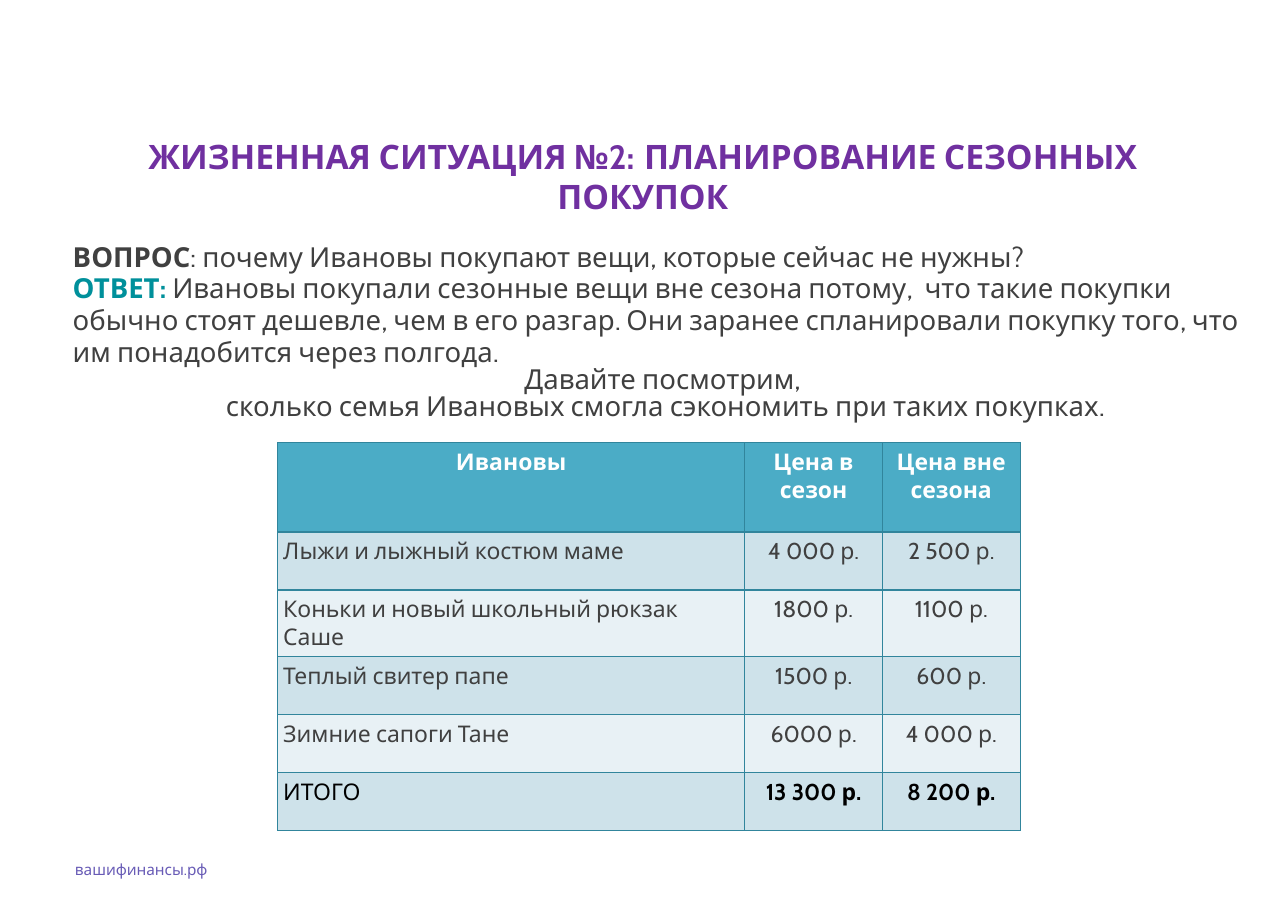
from dataclasses import dataclass

from lxml.etree import SubElement
from pptx import Presentation
from pptx.dml.color import RGBColor
from pptx.enum.text import MSO_ANCHOR, MSO_AUTO_SIZE, PP_ALIGN
from pptx.oxml.ns import qn
from pptx.util import Inches, Pt


@dataclass(frozen=True)
class Theme:
    font: str = "Cabin"
    title: str = "7030A0"
    text: str = "404040"
    answer: str = "00909B"
    link: str = "685BB6"
    head: str = "4BACC6"
    odd: str = "CEE2EA"
    even: str = "E8F1F5"
    line: str = "31859C"
    white: str = "FFFFFF"
    black: str = "000000"
    title_size: int = 22
    body_size: int = 18
    cell_size: int = 15
    link_size: int = 10
    border: float = 0.96
    inset: float = 0.05


THEME = Theme()
WIDTH, HEIGHT = Inches(11.69), Inches(8.27)

ROWS = [
    ("Ивановы", "Цена в сезон", "Цена вне сезона"),
    ("Лыжи и лыжный костюм маме", "4 000 р.", "2 500 р."),
    ("Коньки и новый школьный рюкзак Саше", "1800 р.", "1100 р."),
    ("Теплый свитер папе", "1500 р.", "600 р."),
    ("Зимние сапоги Тане", "6000 р.", "4 000 р."),
    ("ИТОГО", "13 300 р.", "8 200 р."),
]

BODY = [
    (PP_ALIGN.LEFT, 1.0, [
        ("ВОПРОС", THEME.text, True),
        (": почему Ивановы покупают вещи, которые сейчас не нужны?", THEME.text, False),
    ]),
    (PP_ALIGN.LEFT, 0.96, [
        ("ОТВЕТ: ", THEME.answer, True),
        ("Ивановы покупали сезонные вещи вне сезона потому,  что такие покупки "
         "обычно стоят дешевле, чем в его разгар. Они заранее спланировали "
         "покупку того, что им понадобится через полгода.", THEME.text, False),
    ]),
    (PP_ALIGN.CENTER, 0.8, [("Давайте посмотрим, ", THEME.text, False)]),
    (PP_ALIGN.CENTER, 0.8, [
        ("сколько семья Ивановых смогла сэкономить при таких покупках.", THEME.text, False),
    ]),
]


def across(share):
    return round(WIDTH * share / 100)


def down(share):
    return round(HEIGHT * share / 100)


def place(shape, left, top, width, height):
    shape.left, shape.top = across(left), down(top)
    shape.width, shape.height = across(width), down(height)


def inset(item):
    item.margin_left = item.margin_right = Inches(THEME.inset)
    item.margin_top = item.margin_bottom = Inches(THEME.inset)


def frame(shape, anchor=MSO_ANCHOR.TOP):
    box = shape.text_frame
    box.word_wrap = True
    box.auto_size = MSO_AUTO_SIZE.NONE
    box.vertical_anchor = anchor
    inset(box)
    return box


def style(run, size, color, bold=False):
    run.font.name = THEME.font
    run.font.size = Pt(size)
    run.font.bold = bold
    run.font.color.rgb = RGBColor.from_string(color)


def add_title(slide):
    shape = slide.shapes.title
    place(shape, 4.79, 14.27, 90.25, 14.15)
    box = frame(shape)
    box.text = "ЖИЗНЕННАЯ СИТУАЦИЯ №2: \tПЛАНИРОВАНИЕ СЕЗОННЫХ ПОКУПОК"
    line = box.paragraphs[0]
    line.alignment = PP_ALIGN.CENTER
    style(line.runs[0], THEME.title_size, THEME.title, True)


def add_body(slide):
    shape = slide.placeholders[1]
    place(shape, 5.22, 25.76, 92.9, 26.72)
    box = frame(shape)
    for index, (align, space, parts) in enumerate(BODY):
        line = box.add_paragraph() if index else box.paragraphs[0]
        props = line._p.get_or_add_pPr()
        props.set("marL", "0")
        props.set("indent", "0")
        SubElement(props, qn("a:buNone"))
        line.alignment = align
        line.line_spacing = space
        line.space_before = line.space_after = Pt(0)
        for text, color, bold in parts:
            run = line.add_run()
            run.text = text
            style(run, THEME.body_size, color, bold)


def add_edges(cell):
    props = cell._tc.get_or_add_tcPr()
    for side in ("lnL", "lnR", "lnT", "lnB"):
        edge = SubElement(props, qn(f"a:{side}"), w=str(int(Pt(THEME.border))))
        fill = SubElement(edge, qn("a:solidFill"))
        SubElement(fill, qn("a:srgbClr"), val=THEME.line)


def fill_cell(cell, text, row, col):
    first, last = row == 0, row == len(ROWS) - 1
    inset(cell)
    add_edges(cell)
    fill = THEME.head if first else THEME.odd if row % 2 else THEME.even
    cell.fill.solid()
    cell.fill.fore_color.rgb = RGBColor.from_string(fill)
    cell.text_frame.text = text
    line = cell.text_frame.paragraphs[0]
    line.alignment = PP_ALIGN.CENTER if first or col else PP_ALIGN.LEFT
    color = THEME.white if first else THEME.black if last else THEME.text
    style(line.runs[0], THEME.cell_size, color, first or (last and col > 0))


def add_prices(slide):
    widths = [36.27, 10.69, 10.69]
    heights = [9.79] + [6.36] * (len(ROWS) - 1)
    table = slide.shapes.add_table(
        len(heights), len(widths), across(21.56), down(48.61),
        across(sum(widths)), down(sum(heights))).table
    for col, width in zip(table.columns, widths):
        col.width = across(width)
    for row, height in zip(table.rows, heights):
        row.height = down(height)
    for row, texts in enumerate(ROWS):
        for col, text in enumerate(texts):
            fill_cell(table.cell(row, col), text, row, col)


def add_site(slide):
    shape = slide.shapes.add_textbox(
        across(4.88), down(92.74), across(33.96), down(5.32))
    box = frame(shape, MSO_ANCHOR.MIDDLE)
    box.margin_left = box.margin_right = Inches(0.11)
    box.text = "вашифинансы.рф"
    style(box.paragraphs[0].runs[0], THEME.link_size, THEME.link)


def main():
    deck = Presentation()
    deck.slide_width, deck.slide_height = WIDTH, HEIGHT
    slide = deck.slides.add_slide(deck.slide_layouts[1])
    add_site(slide)
    add_title(slide)
    add_body(slide)
    add_prices(slide)
    deck.save("out.pptx")


if __name__ == "__main__":
    main()
